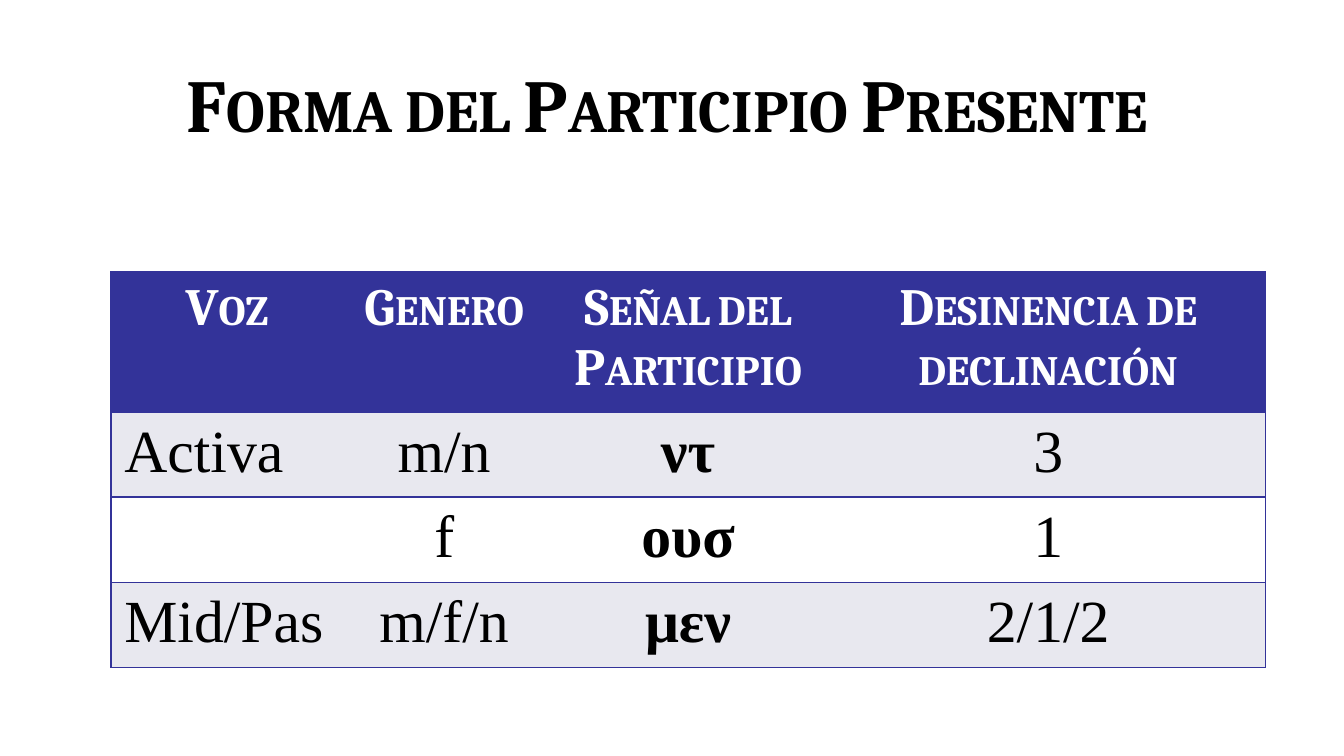
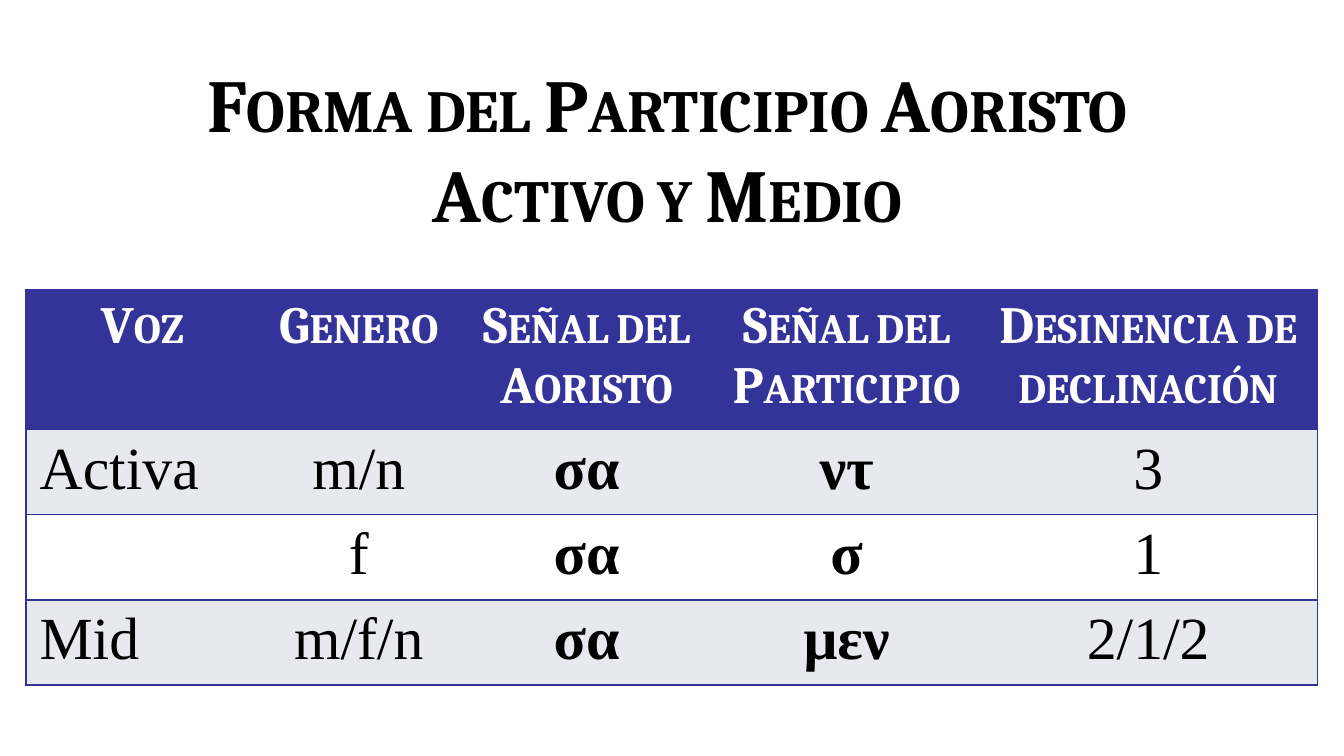
from pptx import Presentation as Deck
from pptx.dml.color import RGBColor as Rgb
from pptx.enum.text import MSO_ANCHOR as Anchor, MSO_AUTO_SIZE as Fit, PP_ALIGN as Align
from pptx.oxml import parse_xml
from pptx.oxml.ns import nsdecls
from pptx.util import Inches, Pt

WIDE = 10
HIGH = WIDE * 9 / 16
HEAD, BODY = "Cambria", "Times New Roman"
BLACK, WHITE, BLUE, GRAY = "000000", "FFFFFF", "333399", "E8E8EF"
PLAIN = "{2D5ABB26-0587-4C30-8999-92F81FD0307C}"
HEAD_ROW, BODY_ROW = 18.5, 11.27


def across(share):
    """Turn a percentage of the slide width into a length."""
    return Inches(WIDE * share / 100)


def down(share):
    """Turn a percentage of the slide height into a length."""
    return Inches(HIGH * share / 100)


def color(code):
    """Turn a hex string into a colour."""
    return Rgb.from_string(code)


def style(font, face, size, code, bold=False, caps=False):
    """Set face, size, colour, weight and small capitals of a font."""
    font.name, font.size, font.bold = face, Pt(size), bold
    font.color.rgb = color(code)
    font._element.set("cap", "small" if caps else "none")


def add_title(slide, text, height):
    """Place the title in small capitals."""
    title = slide.shapes.title
    title.left, title.top = across(9.1), down(6.8)
    title.width, title.height = across(81.1), down(height)
    frame = title.text_frame
    frame.text = text
    frame.word_wrap, frame.auto_size = True, Fit.NONE
    frame.vertical_anchor = Anchor.TOP
    para = frame.paragraphs[0]
    para.alignment = Align.CENTER
    style(para.font, HEAD, 40, BLACK, True, True)


def edge(cell, sides):
    """Draw thin blue borders on the given sides of a cell."""
    props = cell._tc.get_or_add_tcPr()
    for side in sides:
        props.append(parse_xml(
            f'<a:ln{side} {nsdecls("a")} w="12700"><a:solidFill>'
            f'<a:srgbClr val="{BLUE}"/></a:solidFill></a:ln{side}>'))


def write_head(para, text):
    """Write heading words joined by smaller spaces."""
    para.alignment = Align.CENTER
    for index, word in enumerate(text.split()):
        if index:
            gap = para.add_run()
            gap.text = " "
            style(gap.font, HEAD, 18, WHITE, True)
        run = para.add_run()
        run.text = word
        style(run.font, HEAD, 28, WHITE, True, True)


def write_body(para, text, first, bold):
    """Write a body entry, the first column to the left."""
    para.alignment = Align.LEFT if first else Align.CENTER
    if text:
        para.add_run().text = text
    style(para.font, BODY, 32, BLACK, bold)


def add_grid(slide, left, top, widths, rows):
    """Add a table whose signal columns are bold."""
    high = HEAD_ROW + BODY_ROW * (len(rows) - 1)
    frame = slide.shapes.add_table(len(rows), len(widths), across(left), down(top),
                                   across(sum(widths)), down(high))
    table = frame.table
    table._tbl.tblPr.find("{*}tableStyleId").text = PLAIN
    table.first_row = table.horz_banding = False
    last = len(widths) - 1
    for col, width in zip(table.columns, widths):
        col.width = across(width)
    for r, row in enumerate(rows):
        table.rows[r].height = down(BODY_ROW if r else HEAD_ROW)
        for c, text in enumerate(row):
            cell = table.cell(r, c)
            edge(cell, "L" * (c == 0) + "R" * (c == last) + "TB")
            cell.fill.solid()
            cell.fill.fore_color.rgb = color((GRAY if r % 2 else WHITE) if r else BLUE)
            para = cell.text_frame.paragraphs[0]
            if r:
                write_body(para, text, c == 0, 1 < c < last)
            else:
                write_head(para, text)


def main():
    """Build both slides and save them."""
    deck = Deck()
    deck.slide_width, deck.slide_height = across(100), down(100)
    layout = deck.slide_layouts[5]

    slide = deck.slides.add_slide(layout)
    add_title(slide, "Forma del Participio Presente", 13.7)
    add_grid(slide, 8.25, 36, [17.3, 15, 21.3, 32.3], [
        ["Voz", "Genero", "Señal del Participio", "Desinencia de declinación"],
        ["Activa", "m/n", "ντ", "3"],
        ["", "f", "ουσ", "1"],
        ["Mid/Pas", "m/f/n", "μεν", "2/1/2"]])

    slide = deck.slides.add_slide(layout)
    add_title(slide, "Forma del Participio Aoristo Activo y Medio", 25.8)
    add_grid(slide, 1.95, 38.3, [17.3, 14.9, 19, 19.7, 25.2], [
        ["Voz", "Genero", "Señal del Aoristo", "Señal del Participio",
         "Desinencia de declinación"],
        ["Activa", "m/n", "σα", "ντ", "3"],
        ["", "f", "σα", "σ", "1"],
        ["Mid", "m/f/n", "σα", "μεν", "2/1/2"]])

    deck.save("out.pptx")


if __name__ == "__main__":
    main()
